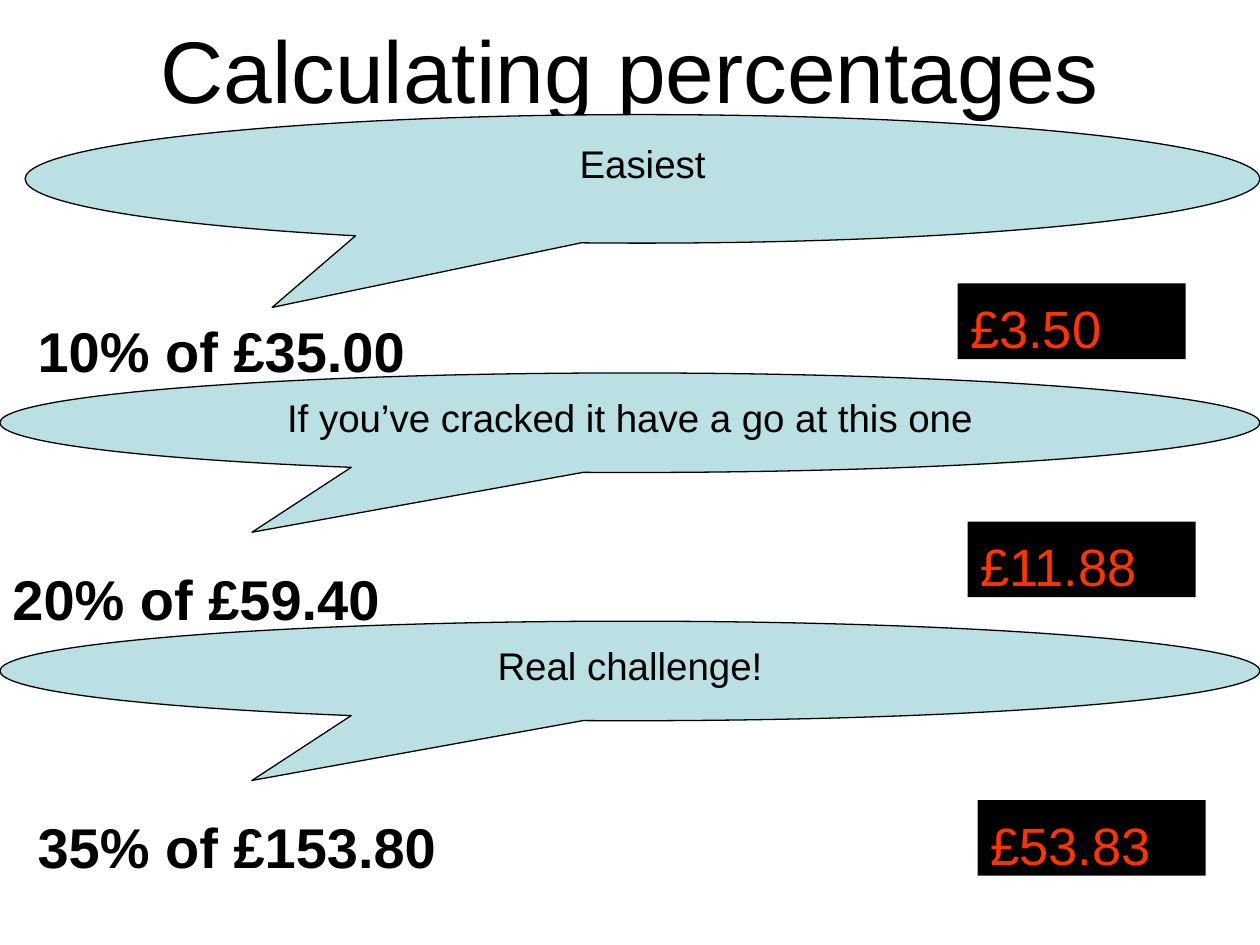
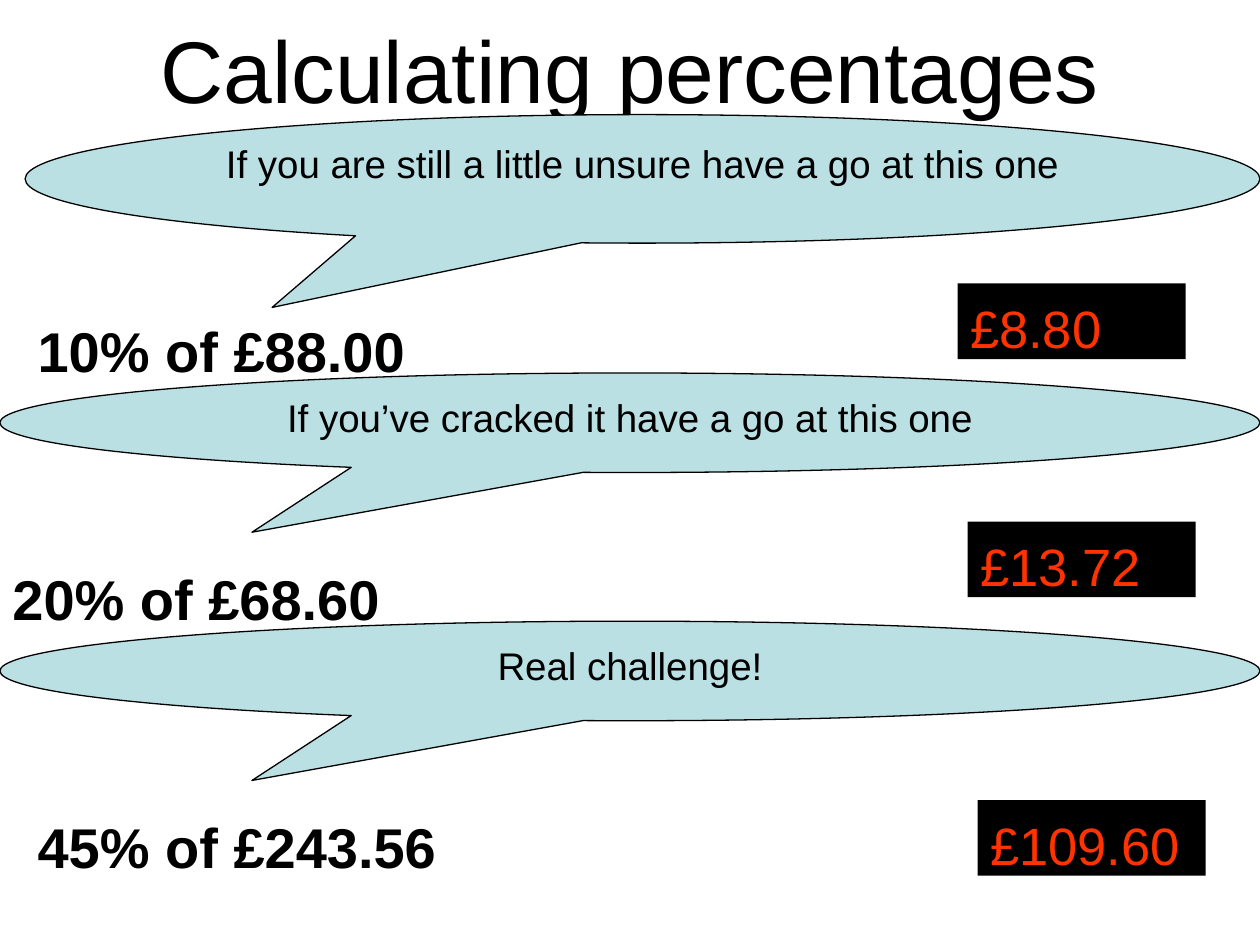
from dataclasses import dataclass
from pptx import Presentation
from pptx.dml.color import RGBColor as Rgb
from pptx.enum.shapes import MSO_SHAPE as Preset
from pptx.enum.text import MSO_ANCHOR as Anchor, PP_ALIGN as Align
from pptx.util import Inches, Pt

TITLE = "Calculating percentages"
CRACKED = "If you’ve cracked it have a go at this one"
CHALLENGE = "Real challenge!"
SLIDES = [
    [
        ("Easiest", "10% of £35.00", "£3.50"),
        (CRACKED, "20% of £59.40", "£11.88"),
        (CHALLENGE, "35% of £153.80", "£53.83"),
    ],
    [
        ("If you are still a little unsure have a go at this one", "10% of £88.00", "£8.80"),
        (CRACKED, "20% of £68.60", "£13.72"),
        (CHALLENGE, "45% of £243.56", "£109.60"),
    ],
]


@dataclass(frozen=True)
class Theme:
    font: str = "Arial"
    ink: Rgb = Rgb(0, 0, 0)
    bubble: Rgb = Rgb(0xBB, 0xE0, 0xE3)
    answer: Rgb = Rgb(0xFF, 0x33, 0x00)
    title_size: int = 50
    prompt_size: int = 22
    question_size: int = 32
    answer_size: int = 30
    outline: float = 0.75


THEME = Theme()
WIDTH, HEIGHT = 10, 7.5
QUESTION_SIZE = (4.65, 0.64)
ANSWER_SIZE = (1.81, 0.6)
ANSWER_LEFT, ANSWER_STEP = 7.6, 0.08
LEVELS = [
    {"bubble": (0.2, 0.91, 9.8, 1.02), "tail": (-0.3, 1.0), "question": (0.2, 2.41), "answer_top": 2.25},
    {"bubble": (0, 2.96, 10, 0.79), "tail": (-0.3, 1.1), "question": (0, 4.38), "answer_top": 4.14},
    {"bubble": (0, 4.93, 10, 0.79), "tail": (-0.3, 1.1), "question": (0.2, 6.35), "answer_top": 6.35},
]


def box(*lengths):
    return [Inches(length) for length in lengths]


def write(part, words, size, color=THEME.ink, bold=False, align=Align.LEFT, inset=0.1):
    frame = part.text_frame
    frame.word_wrap = True
    frame.vertical_anchor = Anchor.TOP
    frame.margin_left = frame.margin_right = Inches(0.1)
    frame.margin_top, frame.margin_bottom = Inches(inset), Inches(0.05)
    paragraph = frame.paragraphs[0]
    paragraph.alignment = align
    run = paragraph.add_run()
    run.text = words
    run.font.name, run.font.size = THEME.font, Pt(size)
    run.font.bold, run.font.color.rgb = bold, color


def add_filled(slide, preset, place, fill):
    part = slide.shapes.add_shape(preset, *box(*place))
    part.shadow.inherit = False
    part.fill.solid()
    part.fill.fore_color.rgb = fill
    return part


def add_level(slide, index, prompt, question, answer):
    level = LEVELS[index]
    bubble = add_filled(slide, Preset.OVAL_CALLOUT, level["bubble"], THEME.bubble)
    bubble.adjustments[0], bubble.adjustments[1] = level["tail"]
    bubble.line.color.rgb = THEME.ink
    bubble.line.width = Pt(THEME.outline)
    write(bubble, prompt, THEME.prompt_size, align=Align.CENTER, inset=0.05)

    sum_text = slide.shapes.add_textbox(*box(*level["question"], *QUESTION_SIZE))
    write(sum_text, question, THEME.question_size, bold=True)

    answer_place = (ANSWER_LEFT + index * ANSWER_STEP, level["answer_top"], *ANSWER_SIZE)
    answer_card = add_filled(slide, Preset.RECTANGLE, answer_place, THEME.ink)
    answer_card.line.fill.background()
    write(answer_card, answer, THEME.answer_size, color=THEME.answer)


def main():
    deck = Presentation()
    deck.slide_width, deck.slide_height = box(WIDTH, HEIGHT)
    for levels in SLIDES:
        slide = deck.slides.add_slide(deck.slide_layouts[6])
        heading = slide.shapes.add_textbox(*box(0, 0, WIDTH, 1))
        write(heading, TITLE, THEME.title_size, align=Align.CENTER, inset=0.13)
        for index, level in enumerate(levels):
            add_level(slide, index, *level)
    deck.save("out.pptx")


if __name__ == "__main__":
    main()
